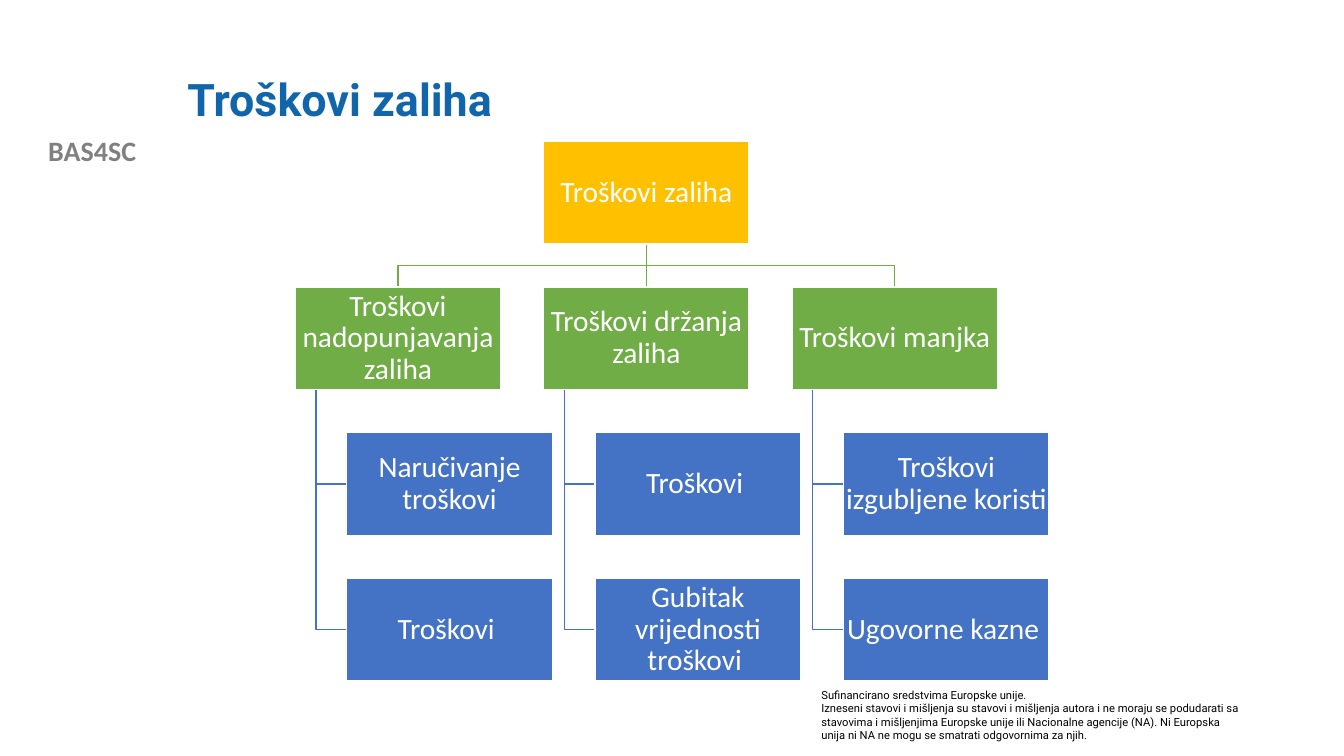
from lxml.etree import SubElement
from pptx import Presentation
from pptx.dml.color import RGBColor
from pptx.enum.shapes import MSO_CONNECTOR, MSO_SHAPE
from pptx.enum.text import MSO_ANCHOR, PP_ALIGN
from pptx.oxml.ns import qn
from pptx.util import Cm, Pt

THEME = {
    "root": RGBColor(0xFF, 0xC0, 0x00),
    "group": RGBColor(0x70, 0xAD, 0x47),
    "item": RGBColor(0x44, 0x72, 0xC4),
    "border": RGBColor(0xFF, 0xFF, 0xFF),
    "line": Pt(1),
    "title": ({"name": "Roboto", "size": Pt(32), "bold": True}, RGBColor(0x10, 0x65, 0xAB)),
    "project": ({"name": "Calibri", "size": Pt(20), "bold": True}, RGBColor(0x80, 0x80, 0x80)),
    "funding": ({"name": "Roboto", "size": Pt(8)}, RGBColor(0, 0, 0)),
    "box": ({"name": "Calibri", "size": Pt(21)}, RGBColor(0xFF, 0xFF, 0xFF)),
}
BOX_W, BOX_H = 5.18, 2.59
LEFT, TOP = 7.44, 3.56
STEP_X, STEP_Y = 6.26, 3.67
INDENT, SPINE = 1.3, 0.52

COLUMNS = [
    ("Troškovi nadopunjavanja zaliha", ["Naručivanje troškovi", "Troškovi "]),
    ("Troškovi držanja zaliha", ["Troškovi ", "Gubitak vrijednosti troškovi "]),
    ("Troškovi manjka", ["Troškovi izgubljene koristi", "Ugovorne kazne "]),
]
TEXTS = [
    ("project", 0, 3.25, 4.65, 1.12, {"alignment": PP_ALIGN.CENTER}, MSO_ANCHOR.TOP, ["BAS4SC"]),
    ("funding", 20.45, 17.22, 11.1, 1.63, {}, MSO_ANCHOR.TOP, [
        "Sufinancirano sredstvima Europske unije.",
        "Izneseni stavovi i mišljenja su stavovi i mišljenja autora i ne moraju se "
        "podudarati sa stavovima i mišljenjima Europske unije ili Nacionalne agencije "
        "(NA). Ni Europska unija ni NA ne mogu se smatrati odgovornima za njih.",
    ]),
    ("title", 4.47, 1.02, 27.08, 3.1, {"line_spacing": 0.9}, MSO_ANCHOR.MIDDLE, ["Troškovi zaliha"]),
]


def write(tf, lines, style, layout, anchor):
    tf.word_wrap = True
    tf.vertical_anchor = anchor
    font, color = THEME[style]
    for i, line in enumerate(lines):
        p = tf.add_paragraph() if i else tf.paragraphs[0]
        for name, value in layout.items():
            setattr(p, name, value)
        r = p.add_run()
        r.text = line
        for name, value in font.items():
            setattr(r.font, name, value)
        r.font.color.rgb = color


def branch(shapes, points, color):
    pts = [(Cm(x), Cm(y)) for x, y in points]
    fb = shapes.build_freeform(*pts[0])
    fb.add_line_segments(pts[1:], close=False)
    sp = fb.convert_to_shape()
    sp.shadow.inherit = False
    sp.fill.background()
    sp.line.color.rgb = color
    sp.line.width = THEME["line"]


prs = Presentation()
prs.slide_width, prs.slide_height = Cm(33.87), Cm(19.05)
s = prs.slides.add_slide(prs.slide_layouts[6])

for style, x, y, w, h, layout, anchor, lines in TEXTS:
    tb = s.shapes.add_textbox(Cm(x), Cm(y), Cm(w), Cm(h))
    write(tb.text_frame, lines, style, layout, anchor)

root_x, root_bottom = LEFT + STEP_X, TOP + BOX_H
mid_x, group_top = root_x + BOX_W / 2, TOP + STEP_Y
bus_y = (root_bottom + group_top) / 2
boxes = [("Troškovi zaliha", root_x, TOP, "root")]

for col, (group, items) in enumerate(COLUMNS):
    x = LEFT + col * STEP_X
    boxes.append((group, x, group_top, "group"))
    center = x + BOX_W / 2
    if col != 1:
        branch(s.shapes, [(mid_x, root_bottom), (mid_x, bus_y), (center, bus_y),
                          (center, group_top)], THEME["group"])
    for row, item in enumerate(items, 1):
        y = group_top + row * STEP_Y
        boxes.append((item, x + INDENT, y, "item"))
        branch(s.shapes, [(x + SPINE, group_top + BOX_H), (x + SPINE, y + BOX_H / 2),
                          (x + INDENT, y + BOX_H / 2)], THEME["item"])

trunk = s.shapes.add_connector(MSO_CONNECTOR.STRAIGHT, Cm(mid_x), Cm(root_bottom),
                               Cm(mid_x), Cm(group_top))
trunk.line.color.rgb = THEME["group"]
trunk.line.width = THEME["line"]
SubElement(trunk._element.spPr, qn("a:effectLst"))

placed = {}
for text, x, y, kind in boxes:
    sp = s.shapes.add_shape(MSO_SHAPE.RECTANGLE, Cm(x), Cm(y), Cm(BOX_W), Cm(BOX_H))
    sp.shadow.inherit = False
    sp.fill.solid()
    sp.fill.fore_color.rgb = THEME[kind]
    sp.line.color.rgb = THEME["border"]
    sp.line.width = THEME["line"]
    tf = sp.text_frame
    for side in ("left", "top", "right", "bottom"):
        setattr(tf, f"margin_{side}", Cm(0.03))
    write(tf, [text], "box", {"alignment": PP_ALIGN.CENTER, "line_spacing": 0.9},
          MSO_ANCHOR.MIDDLE)
    placed[text] = sp

trunk.begin_connect(placed["Troškovi zaliha"], 2)
trunk.end_connect(placed["Troškovi držanja zaliha"], 0)

prs.save("out.pptx")
